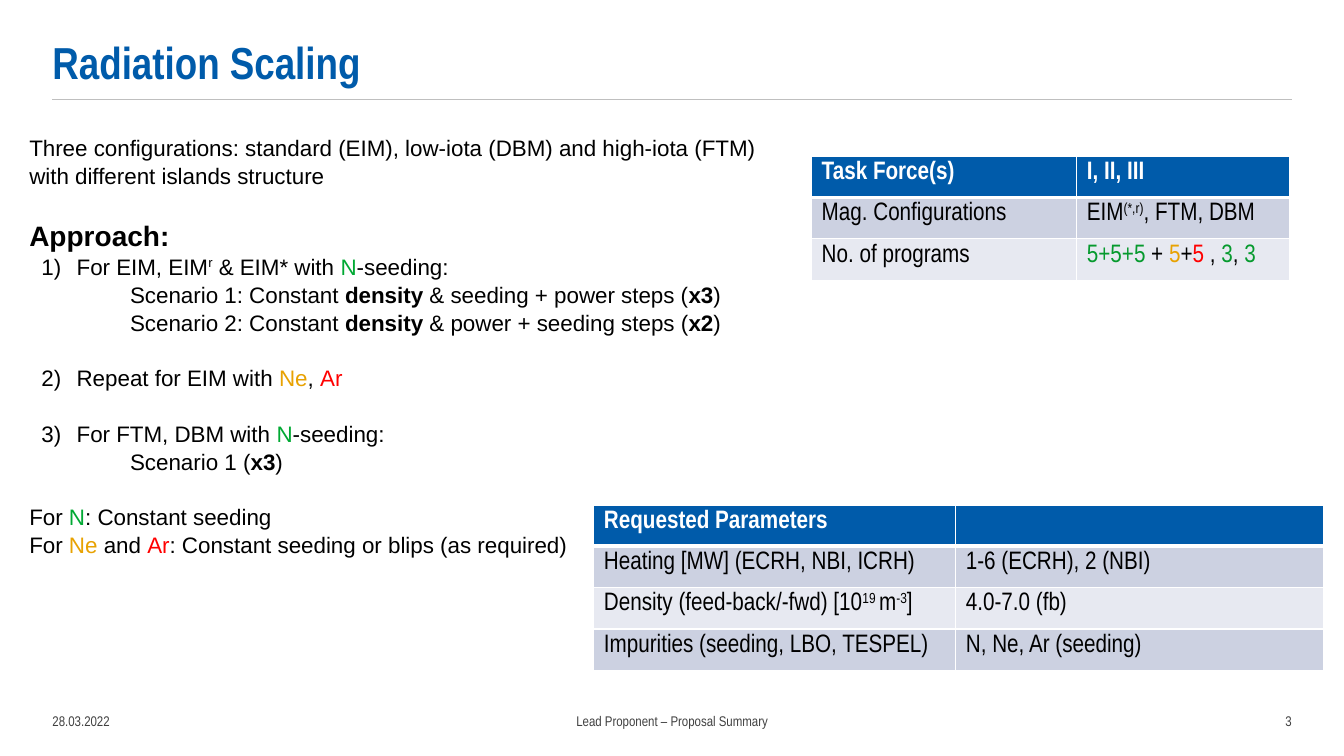
from dataclasses import dataclass, field
from typing import Any

from lxml.etree import SubElement as Sub
from pptx import Presentation
from pptx.dml.color import RGBColor as Rgb
from pptx.enum.shapes import MSO_CONNECTOR as Conn
from pptx.enum.text import MSO_ANCHOR as Anchor, PP_ALIGN as Align
from pptx.oxml.ns import qn
from pptx.util import Inches, Pt

HUES = {
    "black": "000000", "white": "FFFFFF", "blue": "005BAA", "gray": "404040",
    "rule": "BFBFBF", "band": "CCD1E1", "pale": "E7E9F1", "green": "00A933",
    "leaf": "069A2E", "gold": "E8A202", "red": "FF0000",
}
NARROW = "Arial Narrow"
GAP = 19.3


@dataclass
class Run:
    text: str
    hue: str = ""
    bold: bool = False
    base: int = 0


@dataclass
class Para:
    runs: list[Run]
    size: float = 16
    gap: float = 0
    left: float = 0
    num: int = 0


@dataclass
class Label:
    text: str
    box: tuple[float, float, float, float]
    size: float
    hue: str
    align: Any = Align.LEFT
    anchor: Any = Anchor.MIDDLE
    pads: tuple[float, float] = (0, 0.1)
    bold: bool = False
    lead: float = 1.0


@dataclass
class Grid:
    left: float
    top: float
    cols: list[float]
    rows: list[list[list[Run]]] = field(default_factory=list)


def rgb(hue: str) -> Rgb:
    return Rgb.from_string(HUES[hue])


def put(obj: Any, vals: dict[str, Any]) -> None:
    for key, val in vals.items():
        setattr(obj, key, val)


def write(para: Any, runs: list[Run], size: float, face: str, hue: str) -> None:
    for item in runs:
        run = para.add_run()
        run.text = item.text
        put(run.font, {"size": Pt(size), "name": face, "bold": item.bold})
        run.font.color.rgb = rgb(item.hue or hue)
        if item.base:
            run.font._element.set("baseline", str(item.base * 1000))


def frame(slide: Any, box: tuple[float, float, float, float],
          pads: tuple[float, float], anchor: Any) -> Any:
    text = slide.shapes.add_textbox(*map(Inches, box)).text_frame
    put(text, {"word_wrap": True, "vertical_anchor": anchor,
               "margin_left": Inches(pads[0]), "margin_right": Inches(pads[1])})
    return text


def label(slide: Any, item: Label) -> None:
    para = frame(slide, item.box, item.pads, item.anchor).paragraphs[0]
    put(para, {"alignment": item.align, "line_spacing": item.lead})
    write(para, [Run(item.text, bold=item.bold)], item.size, NARROW, item.hue)


def body(slide: Any, paras: list[Para]) -> None:
    text = frame(slide, (0.29, 1.27, 7.59, 5.58), (0, 0.1), Anchor.TOP)
    for i, item in enumerate(paras):
        para = text.add_paragraph() if i else text.paragraphs[0]
        props = para._p.get_or_add_pPr()
        if item.left:
            props.set("marL", str(Inches(item.left)))
        if item.num:
            props.set("indent", str(Inches(-0.35)))
            Sub(props, qn("a:buAutoNum"), type="arabicParenR", startAt=str(item.num))
        put(para, {"line_spacing": 1.05})
        if item.gap:
            para.space_before = Pt(item.gap)
        write(para, item.runs, item.size, "Arial", "black")


def edges(cell: Any, head: bool, below: bool) -> None:
    props = cell._tc.get_or_add_tcPr()
    for side in ("lnL", "lnR", "lnT", "lnB"):
        thick = (head and side == "lnB") or (below and side == "lnT")
        line = Sub(props, qn(f"a:{side}"), w=str(Pt(3 if thick else 0.96)))
        Sub(Sub(line, qn("a:solidFill")), qn("a:srgbClr"), val=HUES["white"])


def table(slide: Any, grid: Grid) -> None:
    high = 0.41
    tab = slide.shapes.add_table(
        len(grid.rows), len(grid.cols), Inches(grid.left), Inches(grid.top),
        Inches(sum(grid.cols)), Inches(high * len(grid.rows))).table
    for col, wide in zip(tab.columns, grid.cols):
        col.width = Inches(wide)
    for r, row in enumerate(grid.rows):
        tab.rows[r].height = Inches(high)
        fill = ("band" if r % 2 else "pale") if r else "blue"
        for c, runs in enumerate(row):
            cell = tab.cell(r, c)
            edges(cell, r == 0, r == 1)
            cell.fill.solid()
            cell.fill.fore_color.rgb = rgb(fill)
            write(cell.text_frame.paragraphs[0], runs, 18, NARROW,
                  "black" if r else "white")


def rule(slide: Any) -> None:
    line = slide.shapes.add_connector(
        Conn.STRAIGHT, *map(Inches, (0.52, 0.99, 12.81, 0.99)))
    line.line.width = Pt(1)
    line.line.color.rgb = rgb("rule")
    Sub(line._element.spPr, qn("a:effectLst"))


def bold(text: str) -> Run:
    return Run(text, bold=True)


def steps(name: str, rest: str, count: str) -> Para:
    return Para([Run(f"{name}: Constant "), bold("density"), Run(f" & {rest} steps ("),
                 bold(count), Run(")")], left=1)


N, NE, AR = Run("N", "green"), Run("Ne", "gold"), Run("Ar", "red")

LABELS = [
    Label("Radiation Scaling", (0.52, 0.21, 10.39, 0.72), 32, "blue",
          anchor=Anchor.BOTTOM, pads=(0, 0), bold=True, lead=0.9),
    Label("28.03.2022", (0.52, 6.95, 1.22, 0.4), 10, "gray"),
    Label("Lead Proponent – Proposal Summary", (1.98, 6.95, 9.37, 0.4), 10, "gray",
          Align.CENTER, pads=(0.1, 0.1)),
    Label("3", (11.63, 6.95, 1.18, 0.4), 10, "gray", Align.RIGHT, pads=(0, 0)),
]

PARAS = [
    Para([Run("Three configurations: standard (EIM), low-iota (DBM) and "
              "high-iota (FTM) with different islands structure")]),
    Para([bold("Approach:")], size=20, gap=GAP),
    Para([Run("For EIM, EIM"), Run("r", base=33), Run(" & EIM* with "), N,
          Run("-seeding:")], left=0.47, num=1),
    steps("Scenario 1", "seeding + power", "x3"),
    steps("Scenario 2", "power + seeding", "x2"),
    Para([Run("Repeat for EIM with "), NE, Run(", "), AR], gap=GAP, left=0.47, num=2),
    Para([Run("For FTM, DBM with "), N, Run("-seeding:")], gap=GAP, left=0.47, num=3),
    Para([Run("Scenario 1 ("), bold("x3"), Run(")")], left=1),
    Para([Run("For "), N, Run(": Constant seeding")], gap=GAP),
    Para([Run("For "), NE, Run(" and "), AR,
          Run(": Constant seeding or blips (as required)")]),
]

GRIDS = [
    Grid(5.89, 5.01, [3.59, 3.65], [
        [[bold("Requested Parameters")], []],
        [[Run("Heating [MW] (ECRH, NBI, ICRH)")], [Run("1-6 (ECRH), 2 (NBI)")]],
        [[Run("Density (feed-back/-fwd) [10"), Run("19 ", base=30), Run("m"),
          Run("-3", base=30), Run("]")], [Run("4.0-7.0 (fb)")]],
        [[Run("Impurities (seeding, LBO, TESPEL)")], [Run("N, Ne, Ar (seeding)")]],
    ]),
    Grid(8.05, 1.55, [2.63, 2.11], [
        [[bold("Task Force(s)")], [bold("I, II, III")]],
        [[Run("Mag. Configurations")],
         [Run("EIM"), Run("(*,r)", base=30), Run(", FTM, DBM")]],
        [[Run("No. of programs")],
         [Run("5+5+5", "leaf"), Run(" + "), Run("5", "gold"), Run("+"),
          Run("5 ", "red"), Run(", "), Run("3", "leaf"), Run(", "), Run("3", "leaf")]],
    ]),
]


def main() -> None:
    deck = Presentation()
    put(deck, {"slide_width": Inches(13.33), "slide_height": Inches(7.5)})
    slide = deck.slides.add_slide(deck.slide_layouts[6])
    # Title, footer and rule
    rule(slide)
    for item in LABELS:
        label(slide, item)
    # Tables
    for grid in GRIDS:
        table(slide, grid)
    # Approach
    body(slide, PARAS)
    deck.save("out.pptx")


if __name__ == "__main__":
    main()
